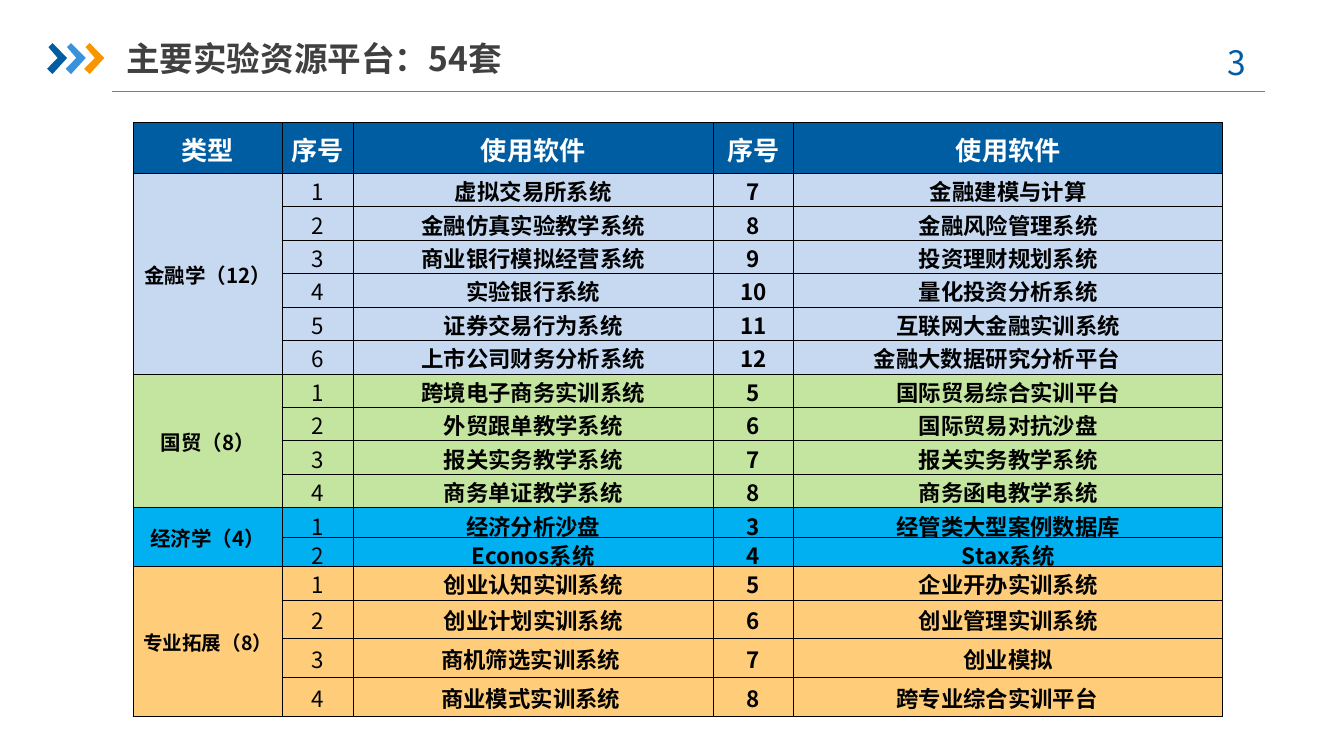
from lxml import etree
from pptx import Presentation
from pptx.dml.color import RGBColor
from pptx.enum.shapes import MSO_CONNECTOR
from pptx.enum.text import MSO_ANCHOR, PP_ALIGN
from pptx.oxml.ns import qn
from pptx.util import Inches, Pt

STRAIGHT = MSO_CONNECTOR.STRAIGHT
MIDDLE, TOP = MSO_ANCHOR.MIDDLE, MSO_ANCHOR.TOP
LEFT, CENTER = PP_ALIGN.LEFT, PP_ALIGN.CENTER
WIDTH = 10
HEIGHT = WIDTH * 9 / 16
FONT = "Noto Sans CJK SC"
BLUE = "005DA2"
CHEVRON_COLORS = [BLUE, "3992DB", "F79600"]
CHEVRON_POINTS = [(0.07, 0.13), (0.27, 0), (1, 0.48), (0.27, 1), (0, 0.83), (0.53, 0.48)]
COLUMN_WIDTHS = [1.11, 0.53, 2.67, 0.6, 3.19]
ROW_HEIGHTS = [0.38] + [0.25] * 10 + [0.22] * 2 + [0.25] + [0.29] * 3
HEADERS = ["类型", "序号", "使用软件", "序号", "使用软件"]
GROUPS = [
    ("金融学（12）", 11, "C6D9F1", [
        ("虚拟交易所系统", "金融建模与计算"),
        ("金融仿真实验教学系统", "金融风险管理系统"),
        ("商业银行模拟经营系统", "投资理财规划系统"),
        ("实验银行系统", "量化投资分析系统"),
        ("证券交易行为系统", "互联网大金融实训系统"),
        ("上市公司财务分析系统", "金融大数据研究分析平台　")]),
    ("国贸（8）", 11, "C4E59F", [
        ("跨境电子商务实训系统", "国际贸易综合实训平台"),
        ("外贸跟单教学系统", "国际贸易对抗沙盘"),
        ("报关实务教学系统", "报关实务教学系统"),
        ("商务单证教学系统", "商务函电教学系统")]),
    ("经济学（4）", 11, "00B0F0", [
        ("经济分析沙盘", "经管类大型案例数据库"),
        ("Econos系统", "Stax系统")]),
    ("专业拓展（8）", 10.5, "FFCC79", [
        ("创业认知实训系统", "企业开办实训系统"),
        ("创业计划实训系统", "创业管理实训系统"),
        ("商机筛选实训系统 ", "创业模拟"),
        ("商业模式实训系统 ", "跨专业综合实训平台　")]),
]


def rgb(value):
    """Turn a hex string into a colour."""
    return RGBColor.from_string(value)


def share(box):
    """Turn shares of the slide's size into lengths."""
    return [Inches(part * size) for part, size in zip(box, (WIDTH, HEIGHT) * 2)]


def write(frame, text, size, color, bold=False, align=CENTER):
    """Write one formatted line of text into a frame."""
    paragraph = frame.paragraphs[0]
    paragraph.alignment = align
    run = paragraph.add_run()
    run.text = text
    for name, value in {"size": Pt(size), "bold": bold, "name": FONT}.items():
        setattr(run.font, name, value)
    run.font.color.rgb = rgb(color)
    etree.SubElement(run.font._element, qn("a:ea"), typeface=FONT)


def add_text(slide, box, text, size, color, bold, align, anchor, side):
    """Add a wrapping text box."""
    frame = slide.shapes.add_textbox(*share(box)).text_frame
    formats = {"word_wrap": True, "vertical_anchor": anchor,
               "margin_left": Inches(side), "margin_right": Inches(side)}
    for name, value in formats.items():
        setattr(frame, name, value)
    write(frame, text, size, color, bold, align)


def add_chevrons(slide, box):
    """Draw three chevrons at equal steps across the box."""
    left, top, width, height = share(box)
    size = width * 0.35
    step = (width - size) / (len(CHEVRON_COLORS) - 1)
    for index, color in enumerate(CHEVRON_COLORS):
        points = [(left + index * step + x * size, top + y * height)
                  for x, y in CHEVRON_POINTS]
        builder = slide.shapes.build_freeform(*points[0])
        builder.add_line_segments(points[1:], close=True)
        shape = builder.convert_to_shape()
        shape.shadow.inherit = False
        shape.fill.solid()
        shape.fill.fore_color.rgb = rgb(color)
        shape.line.fill.background()


def add_header(slide, box):
    """Place the rule, chevrons, title and page number in the header box."""
    left, top, width, height = box

    def inside(x, y, w, h):
        return left + x * width, top + y * height, w * width, h * height

    x, y, w, h = share(inside(0.053, 1, 0.947, 0))
    rule = slide.shapes.add_connector(STRAIGHT, x, y, x + w, y)
    rule.line.color.rgb = rgb("808080")
    rule.line.width = Pt(0.75)
    etree.SubElement(rule._element.spPr, qn("a:effectLst"))
    add_chevrons(slide, inside(0, 0.22, 0.047, 0.5))
    add_text(slide, inside(0.94, 0.09, 0.08, 0.87), "3 ", 18, BLUE,
             False, CENTER, TOP, 0.1)
    add_text(slide, inside(0.065, 0, 0.5, 0.91), "主要实验资源平台：54套", 18,
             "404040", True, LEFT, MIDDLE, 0)


def fill_cell(cell, text, size, color, bold, background):
    """Format one cell with its text, fill and black borders."""
    formats = {"margin_left": Inches(0.01), "margin_right": Inches(0.01),
               "margin_top": Inches(0.01), "margin_bottom": 0,
               "vertical_anchor": MIDDLE}
    for name, value in formats.items():
        setattr(cell, name, value)
    properties = cell._tc.get_or_add_tcPr()
    for side in ("lnL", "lnR", "lnT", "lnB"):
        line = etree.SubElement(properties, qn("a:" + side), w=str(Pt(0.5)))
        fill = etree.SubElement(line, qn("a:solidFill"))
        etree.SubElement(fill, qn("a:srgbClr"), val="000000")
    cell.fill.solid()
    cell.fill.fore_color.rgb = rgb(background)
    if text:
        write(cell.text_frame, text, size, color, bold)


def add_software_table(slide, box):
    """Build the software table, one coloured block for each group."""
    left, top, width, height = share(box)
    table = slide.shapes.add_table(len(ROW_HEIGHTS), len(COLUMN_WIDTHS),
                                   left, top, width, height).table
    for column, weight in zip(table.columns, COLUMN_WIDTHS):
        column.width = int(width * weight / sum(COLUMN_WIDTHS))
    for row, weight in zip(table.rows, ROW_HEIGHTS):
        row.height = int(height * weight / sum(ROW_HEIGHTS))
    for column, header in enumerate(HEADERS):
        fill_cell(table.cell(0, column), header, 14, "FFFFFF", True, BLUE)
    row = 1
    for label, size, color, pairs in GROUPS:
        count = len(pairs)
        for offset, (one, two) in enumerate(pairs):
            texts = ["" if offset else label, str(offset + 1), one,
                     str(count + offset + 1), two]
            for column, text in enumerate(texts):
                fill_cell(table.cell(row + offset, column), text,
                          12 if column else size, "000000", column != 1, color)
        table.cell(row, 0).merge(table.cell(row + count - 1, 0))
        row += count


def main():
    """Build and save the presentation."""
    presentation = Presentation()
    presentation.slide_width = Inches(WIDTH)
    presentation.slide_height = Inches(HEIGHT)
    slide = presentation.slides.add_slide(presentation.slide_layouts[6])
    add_header(slide, (0.035, 0.039, 0.906, 0.082))
    add_software_table(slide, (0.099, 0.162, 0.811, 0.786))
    presentation.save("out.pptx")


if __name__ == "__main__":
    main()
